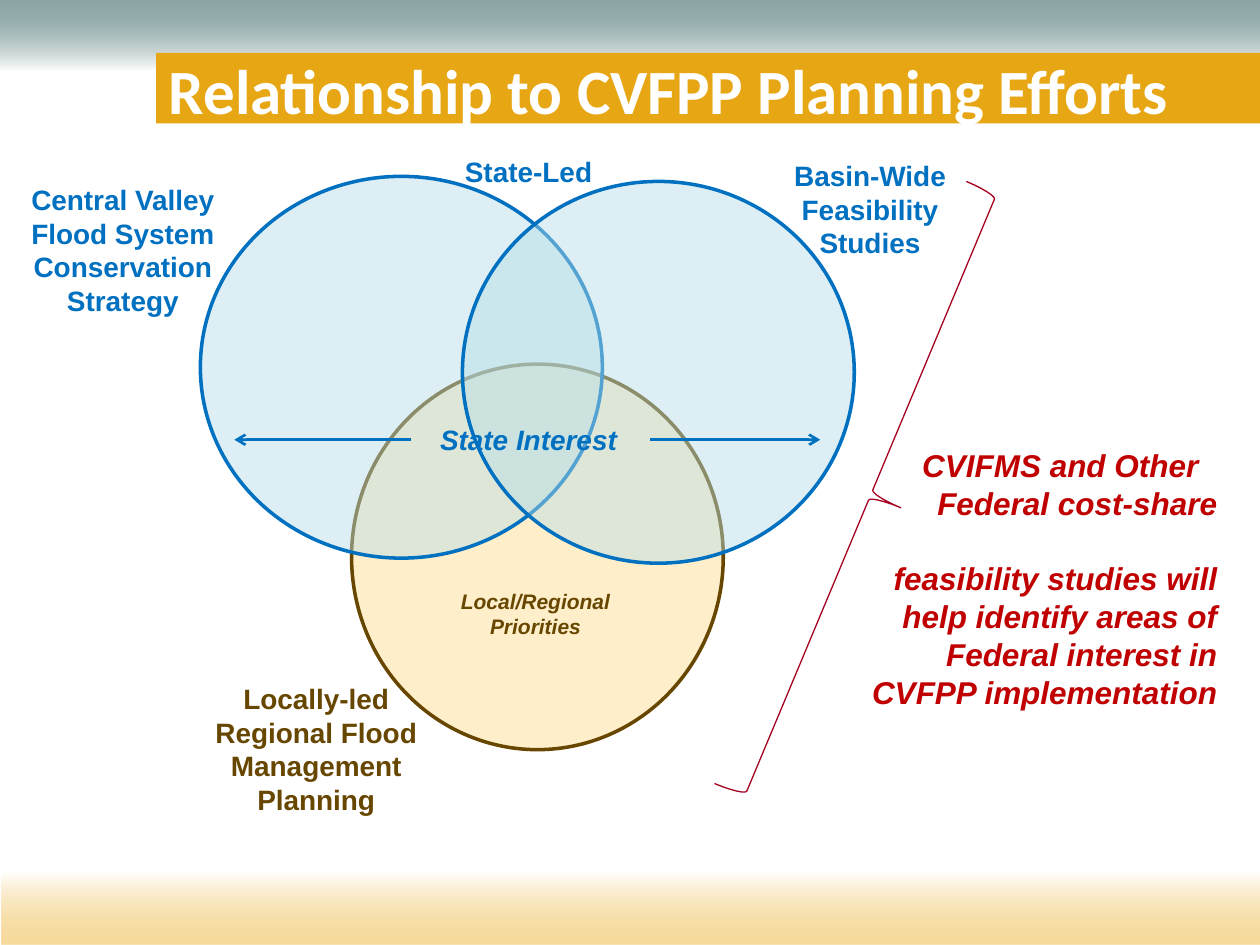
from lxml import etree
from pptx import Presentation
from pptx.dml.color import RGBColor
from pptx.enum.shapes import MSO_CONNECTOR as Connector, MSO_SHAPE as Shape
from pptx.enum.text import MSO_ANCHOR as Anchor, PP_ALIGN as Align
from pptx.oxml.ns import qn
from pptx.util import Inches, Pt

WHITE = RGBColor(0xFF, 0xFF, 0xFF)
TEAL = RGBColor(0x21, 0x53, 0x52)
AMBER = RGBColor(0xEE, 0xB8, 0x40)
GOLD = RGBColor(0xE7, 0xA6, 0x14)
BLUE = RGBColor(0x00, 0x70, 0xC0)
PALE_BLUE = RGBColor(0xB7, 0xDE, 0xE8)
BROWN = RGBColor(0x67, 0x47, 0x00)
YELLOW = RGBColor(0xFF, 0xC4, 0x43)
RED = RGBColor(0xC0, 0x00, 0x00)
MAROON = RGBColor(0xA5, 0x00, 0x21)

STATE_LABEL = {"name": "Arial", "size": Pt(16), "bold": True, "italic": False}
STATE_INTEREST = STATE_LABEL | {"italic": True}
PRIORITIES = STATE_INTEREST | {"size": Pt(12)}
FEDERAL = STATE_INTEREST | {"size": Pt(18)}
TITLE = {"name": "Calibri", "size": Pt(36), "bold": True}


def format_font(paragraph, style, color):
    for name, value in style.items():
        setattr(paragraph.font, name, value)
    paragraph.font.color.rgb = color


def set_alpha(color_element, percent):
    etree.SubElement(color_element, qn("a:alpha"), val=str(percent * 1000))


def add_shape(slide, kind, box):
    shape = slide.shapes.add_shape(kind, *map(Inches, box))
    shape.shadow.inherit = False
    return shape


def add_fade(slide, box, color, angle):
    shape = add_shape(slide, Shape.RECTANGLE, box)
    shape.line.fill.background()
    shape.fill.gradient()
    shape.fill.gradient_angle = angle
    for stop, rgb, position in zip(shape.fill.gradient_stops, (color, WHITE), (0, 0.52)):
        stop.color.rgb = rgb
        stop.position = position
    set_alpha(next(shape._element.iter(qn("a:srgbClr"))), 51)


def add_title(slide, box, text):
    left, top, width, height = box
    add_fade(slide, (-0.01, 0, 10.03, 1.09), TEAL, 270)
    band = add_shape(slide, Shape.RECTANGLE, (left, top, width, 0.56))
    band.fill.solid()
    band.fill.fore_color.rgb = GOLD
    band.line.fill.background()
    title = slide.shapes.title
    title.left, title.top, title.width, title.height = map(Inches, box)
    title.text_frame.text = text
    title.text_frame.vertical_anchor = Anchor.MIDDLE
    paragraph = title.text_frame.paragraphs[0]
    paragraph.alignment = Align.LEFT
    format_font(paragraph, TITLE, WHITE)
    band._element.addnext(title._element)


def add_circle(slide, box, fill, alpha, line):
    circle = add_shape(slide, Shape.OVAL, box)
    circle.fill.solid()
    circle.fill.fore_color.rgb = fill
    set_alpha(next(circle._element.iter(qn("a:srgbClr"))), alpha)
    circle.line.color.rgb = line
    circle.line.width = Pt(2)


def add_text(slide, box, text, style, color, anchor=Anchor.TOP):
    frame = slide.shapes.add_textbox(*map(Inches, box)).text_frame
    frame.word_wrap = True
    frame.vertical_anchor = anchor
    frame.text = text
    for paragraph in frame.paragraphs:
        paragraph.alignment = Align.CENTER
        format_font(paragraph, style, color)
    return frame


def add_arrow(slide, start, end, y):
    arrow = slide.shapes.add_connector(
        Connector.STRAIGHT, Inches(start), Inches(y), Inches(end), Inches(y))
    arrow.line.color.rgb = BLUE
    arrow.line.width = Pt(1.5)
    etree.SubElement(arrow.line._get_or_add_ln(), qn("a:tailEnd"), type="arrow")
    etree.SubElement(arrow._element.spPr, qn("a:effectLst"))


def add_venn(slide, box):
    left, top, width, height = box
    add_circle(slide, (left + 1.2, top + 1.49, 2.95, 3.06), YELLOW, 28, BROWN)
    add_circle(slide, (left, top, 3.19, 3.03), PALE_BLUE, 46, BLUE)
    add_circle(slide, (left + width - 3.11, top + 0.04, 3.11, 3.03), PALE_BLUE, 46, BLUE)
    for start, end in ((1.67, 0.27), (3.57, 4.92)):
        add_arrow(slide, left + start, left + end, top + 2.09)
    add_text(slide, (left + 1.57, top + 1.89, 2.07, 0.4), "State Interest",
             STATE_INTEREST, BLUE, Anchor.MIDDLE)
    add_text(slide, (left + 1.75, top + 3.22, 1.82, 0.5), "Local/Regional Priorities",
             PRIORITIES, BROWN)


def add_circle_labels(slide):
    labels = (
        ((6.01, 1.21, 1.79, 0.91), "Basin-Wide Feasibility Studies", BLUE),
        ((1.37, 5.36, 2.28, 1.18), "Locally-led Regional Flood Management Planning", BROWN),
        ((-0.11, 1.4, 2.17, 1.18), "Central Valley Flood System Conservation Strategy", BLUE),
        ((3.11, 1.18, 2.17, 0.37), "State-Led", BLUE),
    )
    for box, text, color in labels:
        add_text(slide, box, text, STATE_LABEL, color)


def add_federal_note(slide, box):
    frame = add_text(
        slide, box,
        "CVIFMS and Other\nFederal cost-share\nfeasibility studies will help identify "
        "areas of Federal interest in CVFPP implementation", FEDERAL, RED)
    first, second, third = frame.paragraphs
    first.alignment = Align.LEFT
    first._p.get_or_add_pPr().set("marL", str(Inches(0.44)))
    second.alignment = third.alignment = Align.RIGHT
    third.space_before = Pt(21.5)


def add_brace(slide, box):
    brace = add_shape(slide, Shape.RIGHT_BRACE, box)
    brace.rotation = 22.7
    brace.fill.background()
    brace.line.color.rgb = MAROON
    brace.line.width = Pt(0.75)


def main():
    presentation = Presentation()
    presentation.slide_width, presentation.slide_height = Inches(10), Inches(7.5)
    slide = presentation.slides.add_slide(presentation.slide_layouts[5])
    add_title(slide, (1.24, 0.42, 8.77, 0.58), "Relationship to CVFPP Planning Efforts")
    add_fade(slide, (0.01, 6.39, 9.99, 1.11), AMBER, 90)
    add_venn(slide, (1.59, 1.4, 5.19, 4.55))
    add_circle_labels(slide)
    add_federal_note(slide, (6.78, 3.49, 2.98, 1.92))
    add_brace(slide, (6.65, 1.34, 0.52, 5.18))
    presentation.save("out.pptx")


if __name__ == "__main__":
    main()
